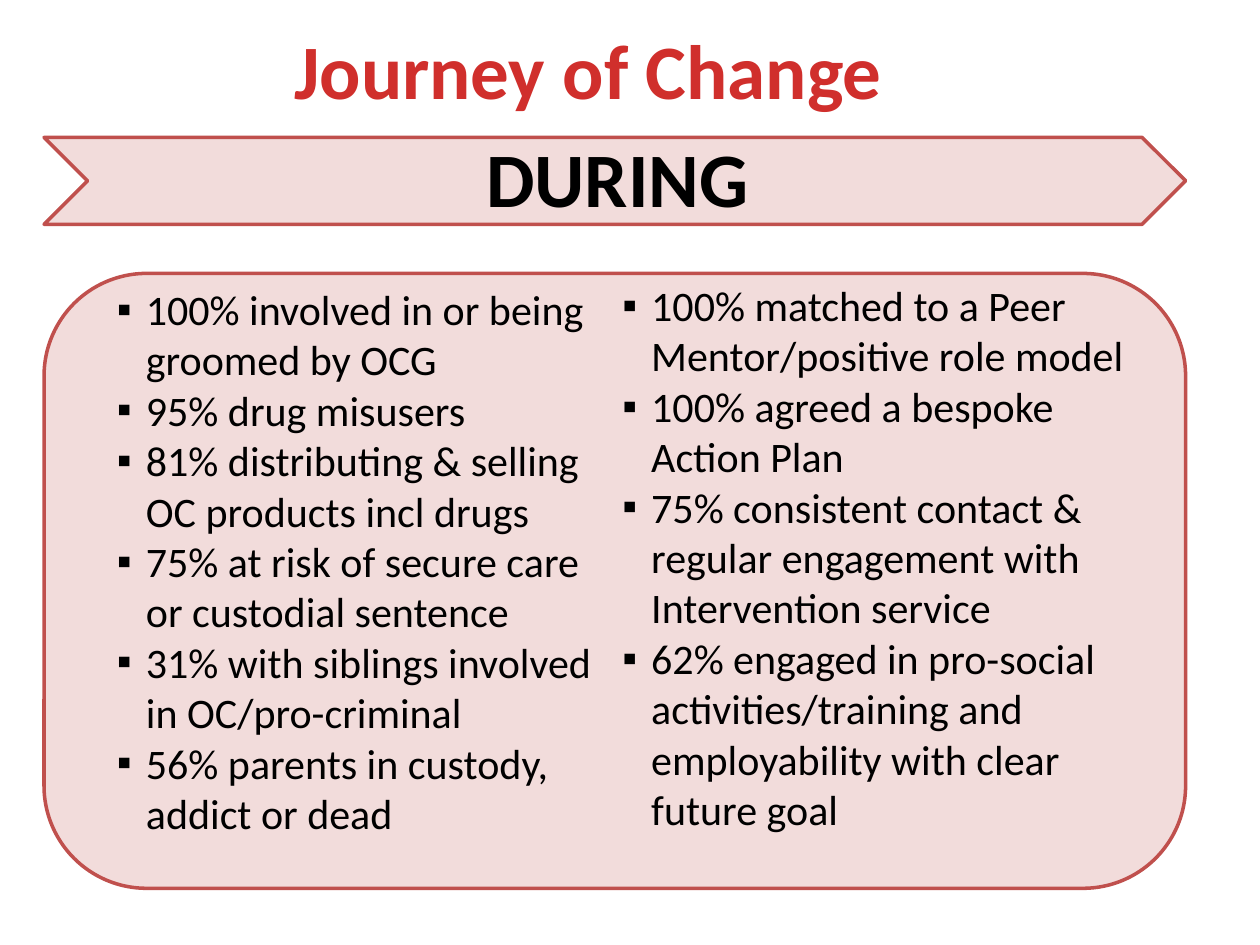
from lxml.etree import SubElement
from pptx import Presentation
from pptx.dml.color import RGBColor
from pptx.enum.shapes import MSO_SHAPE
from pptx.enum.text import MSO_ANCHOR, MSO_AUTO_SIZE, PP_ALIGN
from pptx.oxml.ns import qn
from pptx.util import Inches, Pt

RED = RGBColor(0xD0, 0x2F, 0x2C)
BORDER = RGBColor(0xC0, 0x50, 0x4D)
PINK = RGBColor(0xF2, 0xDC, 0xDB)
BLACK = RGBColor(0x00, 0x00, 0x00)

RISKS = [
    "100% involved in or being groomed by OCG",
    "95% drug misusers",
    "81% distributing & selling OC products incl drugs",
    "75% at risk of secure care or custodial sentence",
    "31% with siblings involved in OC/pro-criminal",
    "56% parents in custody, addict or dead",
]
SUPPORT = [
    "100% matched to a Peer Mentor/positive role model",
    "100% agreed a bespoke Action Plan",
    "75% consistent contact & regular engagement with Intervention service",
    "62% engaged in pro-social activities/training and employability with clear future goal",
]


class SlideBuilder:
    """Holds the slide and its style, with a method for each kind of element."""

    heading = {"name": "Calibri", "size": Pt(44), "bold": True}
    body = {"name": "Calibri", "size": Pt(24), "bold": False}
    frame_format = {
        "word_wrap": True,
        "auto_size": MSO_AUTO_SIZE.NONE,
        "vertical_anchor": MSO_ANCHOR.TOP,
    }
    indent = Inches(0.23)

    def __init__(self, deck):
        self.slide = deck.slides.add_slide(deck.slide_layouts[5])

    def add_span(self, para, text, style, color):
        span = para.add_run()
        span.text = text
        for name, value in style.items():
            setattr(span.font, name, value)
        span.font.color.rgb = color

    def format_frame(self, box):
        for name, value in self.frame_format.items():
            setattr(box.text_frame, name, value)
        return box.text_frame

    def title(self, text, left, top, width, height):
        box = self.slide.shapes.title
        place = {"left": left, "top": top, "width": width, "height": height}
        for name, value in place.items():
            setattr(box, name, Inches(value))
        frame = self.format_frame(box)
        frame.margin_right = Inches(0.24)
        para = frame.paragraphs[0]
        para.alignment = PP_ALIGN.CENTER
        self.add_span(para, text, self.heading, RED)

    def panel(self, kind, *place):
        shape = self.slide.shapes.add_shape(kind, *map(Inches, place))
        shape.shadow.inherit = False
        shape.fill.solid()
        shape.fill.fore_color.rgb = PINK
        shape.line.color.rgb = BORDER
        shape.line.width = Pt(2)

    def text_box(self, *place):
        return self.format_frame(self.slide.shapes.add_textbox(*map(Inches, place)))

    def label(self, text, *place):
        para = self.text_box(*place).paragraphs[0]
        self.add_span(para, text, self.heading, BLACK)

    def bullets(self, items, *place):
        frame = self.text_box(*place)
        for index, item in enumerate(items):
            para = frame.add_paragraph() if index else frame.paragraphs[0]
            self.add_span(para, item, self.body, BLACK)
            properties = para._p.get_or_add_pPr()
            properties.set("marL", str(self.indent))
            properties.set("indent", str(-self.indent))
            SubElement(properties, qn("a:buFont"), typeface="Arial")
            SubElement(properties, qn("a:buChar"), char="▪")


def main():
    deck = Presentation()
    deck.slide_width, deck.slide_height = Inches(10), Inches(7.5)
    page = SlideBuilder(deck)
    page.title("Journey of Change", 0.63, 0.13, 8.22, 0.84)
    page.panel(MSO_SHAPE.CHEVRON, 0.35, 1.09, 9.06, 0.69)
    page.label("DURING", 3.76, 0.99, 2.42, 0.84)
    page.panel(MSO_SHAPE.ROUNDED_RECTANGLE, 0.35, 2.17, 9.06, 4.88)
    page.bullets(RISKS, 0.83, 2.2, 4.01, 5.18)
    page.bullets(SUPPORT, 4.84, 2.17, 4.49, 5.3)
    deck.save("out.pptx")


if __name__ == "__main__":
    main()
